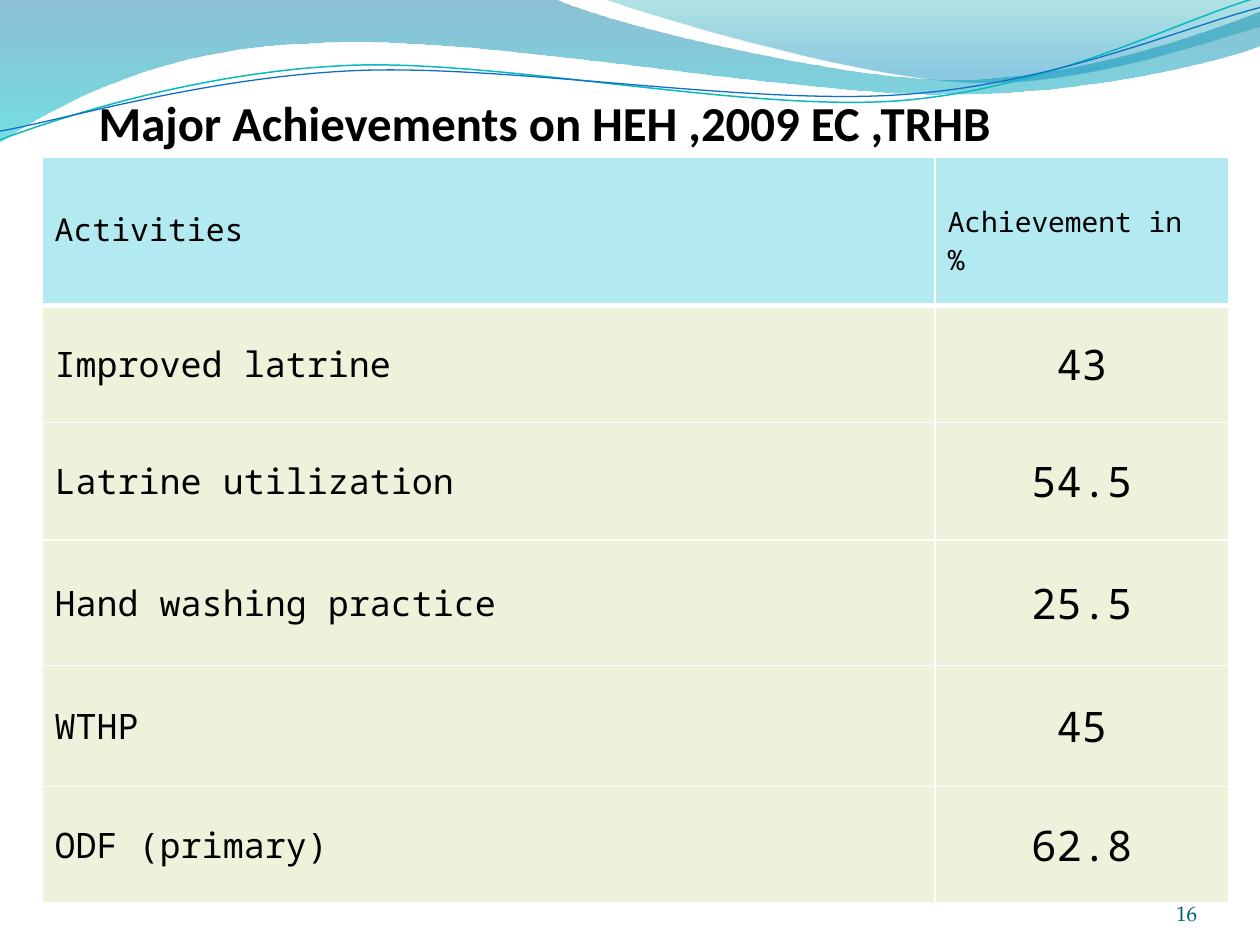
"""Build a slide with a table of hygiene and sanitation achievements under a wave banner."""
from lxml import etree
from pptx import Presentation
from pptx import util as u
from pptx.dml.color import RGBColor
from pptx.enum import text as t
from pptx.oxml.ns import qn

COLORS = {"black": "000000", "white": "FFFFFF", "header": "B3EAF2", "body": "EDF3DB",
          "number": "045D75", "teal": "0AB8BF", "blue": "0F6FC6",
          "wave_top": "0074A1", "wave_end": "00C6CF",
          "crest_top": "00A1A9", "crest_end": "008BBF"}


def write(frame, wording, size, font="Noto Sans Mono", color="black", bold=False,
          align=t.PP_ALIGN.LEFT):
    frame.word_wrap = True
    paragraph = frame.paragraphs[0]
    paragraph.alignment = align
    run = paragraph.add_run()
    run.text = wording
    run.font.size = u.Pt(size)
    run.font.name = font
    run.font.bold = bold
    run.font.color.rgb = RGBColor.from_string(COLORS[color])


def draw(slide, start, segments, closed):
    points = [(u.Pt(x), u.Pt(y)) for segment in segments
              for x, y in zip(segment[::2], segment[1::2])]
    builder = slide.shapes.build_freeform(u.Pt(start[0]), u.Pt(start[1]))
    builder.add_line_segments(points, close=closed)
    curve = builder.convert_to_shape()
    curve.shadow.inherit = False
    steps = iter(list(curve._element.spPr.iter(qn("a:lnTo"))))
    for segment in segments:
        step = next(steps)
        if len(segment) == 6:
            bezier = etree.Element(qn("a:cubicBezTo"))
            step.addprevious(bezier)
            for corner in (step, next(steps), next(steps)):
                bezier.append(corner[0])
                corner.getparent().remove(corner)
    return curve


deck = Presentation()
deck.slide_width, deck.slide_height = u.Pt(720), u.Pt(540)
slide = deck.slides.add_slide(deck.slide_layouts[5])

bands = [
    ((0, 0), [(316.8, -0.7), (342.7, 12.2, 478.1, 45.4, 545.8, 45.4),
              (614.2, 45.4, 689.8, 18.7, 720, 6.5), (720.7, 25.9),
              (707.8, 31.7, 626.4, 54.7, 537.1, 54), (447.8, 54, 275, 20.2, 185, 24.5),
              (92.2, 25.9, 33.1, 59.8, -0.7, 81.4)],
     [("wave_top", 0, 45), ("wave_end", 1, 55)]),
    ((344.9, -0.7), [(366.5, 7.9, 491, 44.6, 553.7, 46.8),
                     (616.3, 49.7, 691.9, 23, 720, 15.1), (720, 0)],
     [("crest_top", 0, 30), ("crest_end", 0.8, 45)]),
]
for start, segments, stops in bands:
    band = draw(slide, start, segments, True)
    band.line.fill.background()
    band.fill.gradient()
    band.fill.gradient_angle = 270
    for stop, (color, position, _) in zip(band.fill.gradient_stops, stops):
        stop.color.rgb = RGBColor.from_string(COLORS[color])
        stop.position = position
    tints = band._element.spPr.iter(qn("a:srgbClr"))
    for tint, (_, _, opacity) in zip(tints, stops):
        etree.SubElement(tint, qn("a:alpha"), val=str(opacity * 1000))

strands = [
    ("teal", 0.85, (0, 79.9), [(34.6, 67, 113.8, 41, 199.4, 37.4),
                               (284.4, 33.8, 427, 64.1, 513.4, 57.6),
                               (599.8, 51.1, 675.4, 10.8, 718.6, -1.4)]),
    ("blue", 0.75, (0, 74.9), [(33.8, 69.1, 118.1, 43.9, 203.8, 40.3),
                               (290.2, 36.7, 429.8, 60.5, 516.2, 54),
                               (601.9, 48.2, 677.5, 15.1, 720, 4.3)]),
]
for color, width, start, segments in strands:
    strand = draw(slide, start, segments, False)
    strand.fill.background()
    strand.line.color.rgb = RGBColor.from_string(COLORS[color])
    strand.line.width = u.Pt(width)

heading = slide.shapes.title
heading.left, heading.top, heading.width, heading.height = map(u.Pt, (36, 55.4, 648, 34.6))
frame = heading.text_frame
frame.auto_size = t.MSO_AUTO_SIZE.NONE
frame.vertical_anchor = t.MSO_ANCHOR.BOTTOM
frame.margin_left, frame.margin_top, frame.margin_right, frame.margin_bottom = map(
    u.Pt, (20.4, 0, 0, 3.6))
write(frame, "Major Achievements on HEH ,2009 EC ,TRHB", 27.9, font="Calibri", bold=True)

page = slide.shapes.add_textbox(*map(u.Pt, (624, 500.4, 60, 28.8))).text_frame
page.margin_left = page.margin_top = page.margin_right = page.margin_bottom = 0
page.vertical_anchor = t.MSO_ANCHOR.BOTTOM
write(page, "16", 12, font="TeX Gyre Pagella", color="number", align=t.PP_ALIGN.RIGHT)

records = [("Activities", "Achievement in %"), ("Improved latrine", "43"),
           ("Latrine utilization", "54.5"), ("Hand washing practice", "25.5"),
           ("WTHP", "45"), ("ODF (primary)", "62.8")]
heights = [84.6, 66.8, 67.2, 71.8, 69, 66.8]
achievements = slide.shapes.add_table(
    len(records), 2, *map(u.Pt, (24, 90, 678, sum(heights)))).table
for column, width in zip(achievements.columns, (510.4, 167.6)):
    column.width = u.Pt(width)
for r, (record, height) in enumerate(zip(records, heights)):
    achievements.rows[r].height = u.Pt(height)
    for c, wording in enumerate(record):
        cell = achievements.cell(r, c)
        cell.vertical_anchor = t.MSO_ANCHOR.MIDDLE
        for side in "LRTB":
            heavy = (r, side) in ((0, "B"), (1, "T"))
            edge = etree.SubElement(cell._tc.get_or_add_tcPr(), qn("a:ln" + side),
                                    w=str(u.Pt(3 if heavy else 1)))
            paint = etree.SubElement(edge, qn("a:solidFill"))
            etree.SubElement(paint, qn("a:srgbClr"), val=COLORS["white"])
        cell.fill.solid()
        cell.fill.fore_color.rgb = RGBColor.from_string(COLORS["body" if r else "header"])
        size = (20, 24)[c] if r else (18, 16)[c]
        centred = r > 0 and c == 1
        write(cell.text_frame, wording, size,
              align=t.PP_ALIGN.CENTER if centred else t.PP_ALIGN.LEFT)
achievements.cell(0, 0).margin_bottom = u.Pt(6.6)
achievements.cell(0, 1).margin_top = u.Pt(14)
achievements.cell(0, 1).margin_right = u.Pt(14)

deck.save("out.pptx")
